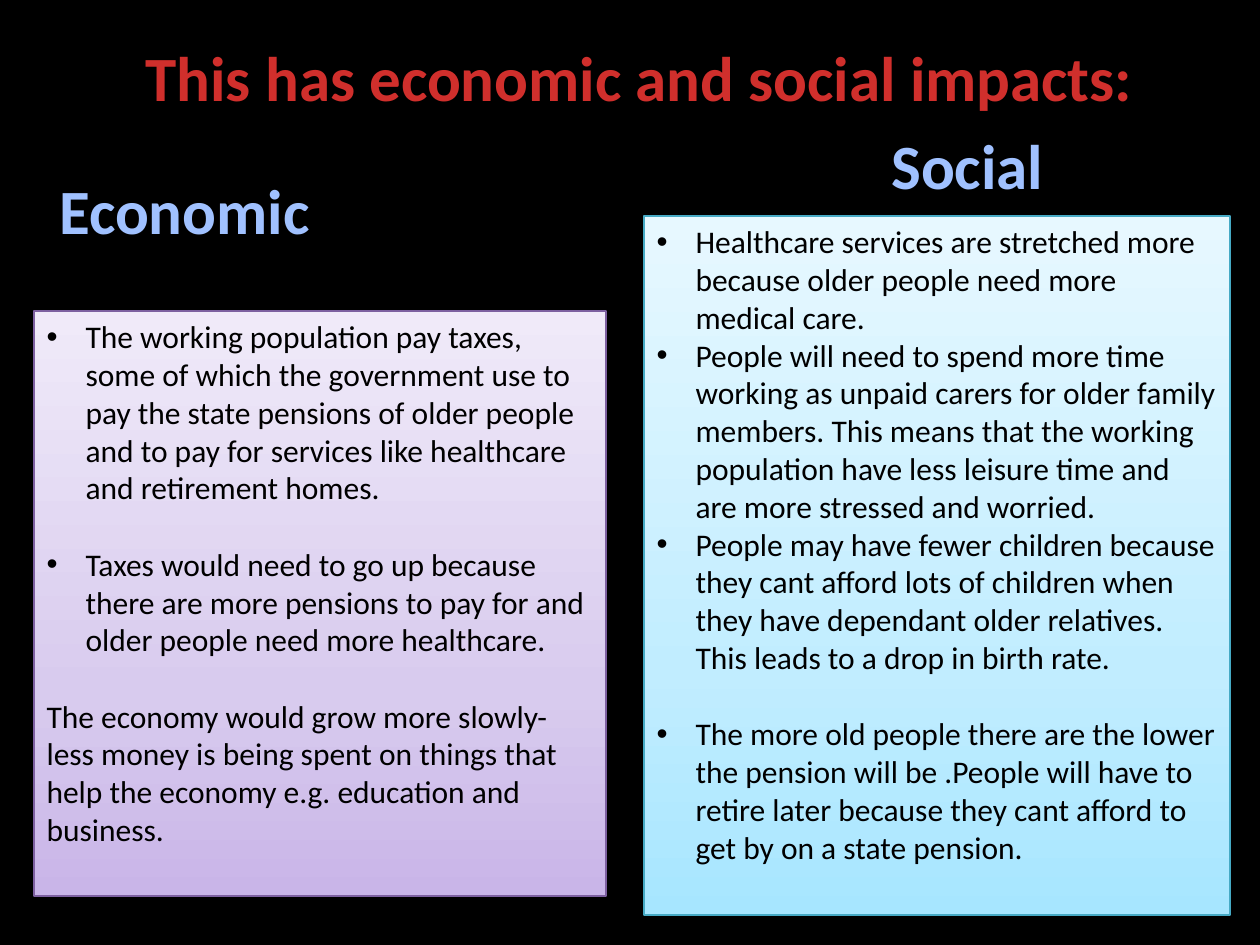
"""Build a slide comparing the economic and social impacts of an ageing population."""
from lxml import etree
from pptx import Presentation
from pptx.dml.color import RGBColor
from pptx.enum.text import MSO_ANCHOR, MSO_AUTO_SIZE, PP_ALIGN
from pptx.oxml.ns import qn
from pptx.util import Pt

PX = 914400 // 126 + 1 / 7
CENTER, LEFT = PP_ALIGN.CENTER, PP_ALIGN.LEFT
TOP, NO_FIT = MSO_ANCHOR.TOP, MSO_AUTO_SIZE.NONE
COLORS = {"background": "000000", "text": "000000", "outline": "467AB8",
          "economic": "7D60A0", "social": "46AAC5"}
GRADIENTS = {
    "title": [(0, "FC7C7A"), (75, "D02F2C"), (100, "C70500")],
    "heading": [(0, "BFD3F9"), (9, "A0C1FF"), (50, "003D85"), (79, "A0C1FF"), (100, "BFD3F9")],
    "economic": [(0, "C9B5E8"), (35, "D8CBEE"), (100, "F0EAF9")],
    "social": [(0, "A7E6FF"), (35, "C1EDFF"), (100, "E7F8FF")],
}
HEADERS = [
    (0, "This has economic and social impacts:", "title", (79, 32, 1121, 89)),
    (1, "Economic", "heading", (45, 165, 279, 89)),
    (3, "Social", "heading", (878, 120, 179, 89)),
]
PANELS = [
    (2, "economic", (34, 311, 572, 585), [
        ("The working population pay taxes, some of which the government use to pay the state "
         "pensions of older people and to pay for services like healthcare and retirement homes.", True, 0),
        ("Taxes would need to go up because there are more pensions to pay for and older people "
         "need more healthcare.", True, 22),
        ("The economy would grow more slowly- less money is being spent on things that help the "
         "economy e.g. education and business.", False, 22),
    ]),
    (4, "social", (644, 216, 586, 699), [
        ("Healthcare services are stretched more because older people need more medical care.", True, 0),
        ("People will need to spend more time working as unpaid carers for older family members. "
         "This means that the working population have less leisure time and are more stressed "
         "and worried.", True, 0),
        ("People may have fewer children because they cant afford lots of children when they have "
         "dependant older relatives. This leads to a drop in birth rate.", True, 0),
        ("The more old people there are the lower the pension will be .People will have to retire "
         "later because they cant afford to get by on a state pension.", True, 22),
    ]),
]


def place(s, box):
    s.left, s.top, s.width, s.height = [round(v * PX) for v in box]
    s.text_frame.auto_size = NO_FIT
    s.text_frame.vertical_anchor = TOP
    return s.text_frame


def paint_gradient(fill, props, stops, angle):
    fill.solid()
    grad = etree.Element(qn("a:gradFill"), rotWithShape="1")
    stop_list = etree.SubElement(grad, qn("a:gsLst"))
    for pos, color in stops:
        stop = etree.SubElement(stop_list, qn("a:gs"), pos=str(pos * 1000))
        etree.SubElement(stop, qn("a:srgbClr"), val=color)
    etree.SubElement(grad, qn("a:lin"), ang=str(angle * 60000), scaled="0")
    props.replace(props.find(qn("a:solidFill")), grad)


prs = Presentation()
prs.slide_width, prs.slide_height = round(1260 * PX), round(945 * PX)
slide = prs.slides.add_slide(prs.slide_layouts[4])
slide.background.fill.solid()
slide.background.fill.fore_color.rgb = RGBColor.from_string(COLORS["background"])
holders = {s.placeholder_format.idx: s for s in slide.placeholders}

for idx, text, style, box in HEADERS:
    tf = place(holders[idx], box)
    tf.word_wrap = style == "title"
    p = tf.paragraphs[0]
    p.alignment = CENTER
    p.space_before = Pt(0)
    r = p.add_run()
    r.text = text
    r.font.name, r.font.size, r.font.bold = "Calibri", Pt(36), True
    rPr = r.font._element
    paint_gradient(r.font.fill, rPr, GRADIENTS[style], 90)
    if style == "heading":
        ln = etree.Element(qn("a:ln"), w=str(Pt(0.83)))
        solid = etree.SubElement(ln, qn("a:solidFill"))
        etree.SubElement(solid, qn("a:srgbClr"), val=COLORS["outline"])
        rPr.insert(0, ln)

for idx, style, box, paragraphs in PANELS:
    s = holders[idx]
    tf = place(s, box)
    paint_gradient(s.fill, s._element.spPr, GRADIENTS[style], 270)
    s.line.color.rgb = RGBColor.from_string(COLORS[style])
    s.line.width = Pt(0.75)
    for i, (text, bulleted, gap) in enumerate(paragraphs):
        p = tf.add_paragraph() if i else tf.paragraphs[0]
        p.alignment = LEFT
        p.space_before = Pt(gap)
        indent = round(39 * PX) if bulleted else 0
        pPr = p._p.get_or_add_pPr()
        pPr.set("marL", str(indent))
        pPr.set("indent", str(-indent))
        if bulleted:
            etree.SubElement(pPr, qn("a:buChar"), char="•")
        else:
            etree.SubElement(pPr, qn("a:buNone"))
        r = p.add_run()
        r.text = text
        r.font.name, r.font.size = "Calibri", Pt(18)
        r.font.color.rgb = RGBColor.from_string(COLORS["text"])

for idx in (10, 11, 12):
    if idx in holders:
        holders[idx]._element.getparent().remove(holders[idx]._element)

prs.save("out.pptx")
